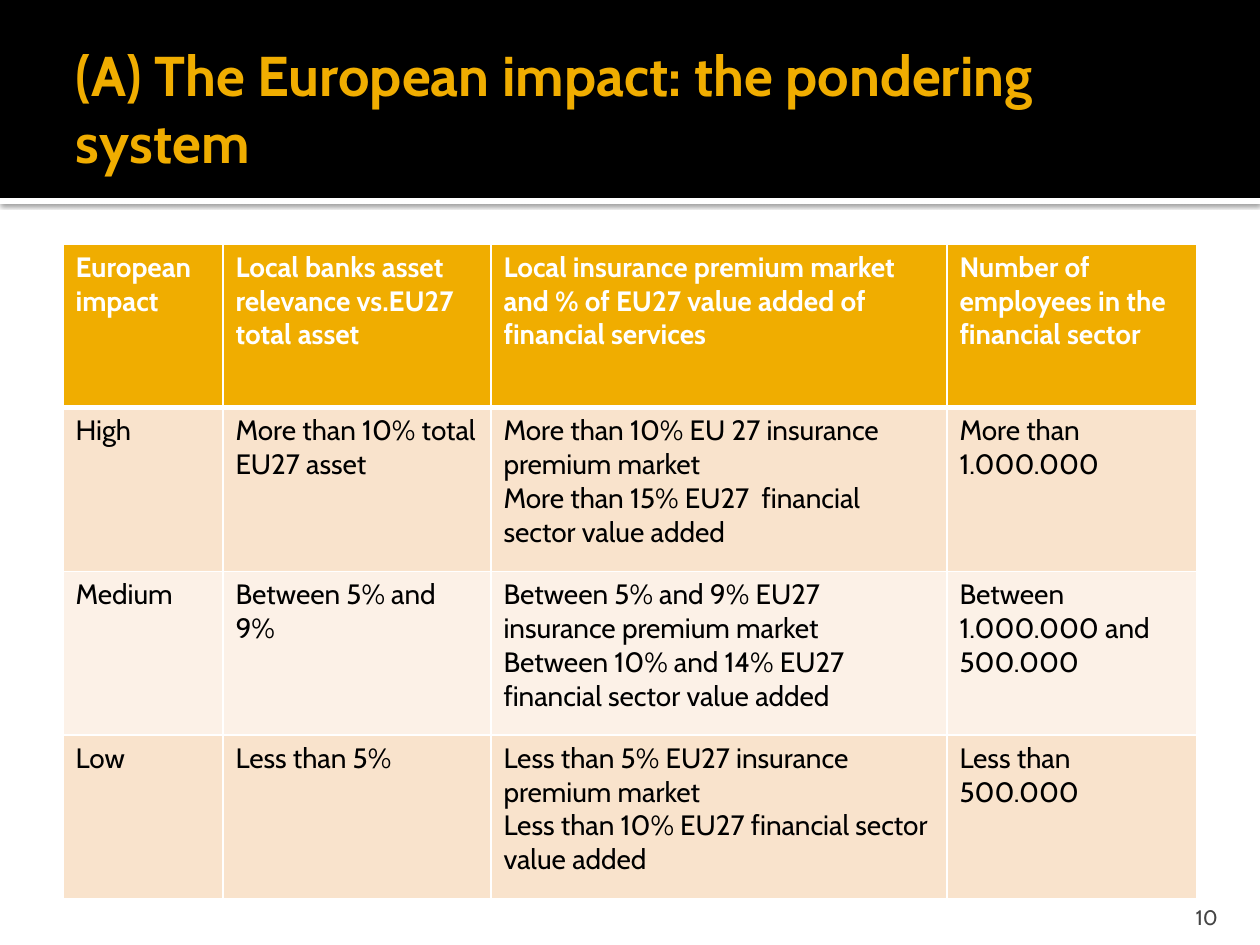
import lxml.etree
import pptx
import pptx.dml.color
import pptx.enum.shapes
import pptx.enum.text
import pptx.oxml.ns
import pptx.util

EMU_PER_PX = 914400 / 126
FONT = "Cabin"
GOLD, WHITE, BLACK, GREY = "F0AD00", "FFFFFF", "000000", "454545"
BANDS = ("F9E3CC", "FCF1E7")
ANCHOR = pptx.enum.text.MSO_ANCHOR
ALIGN = pptx.enum.text.PP_ALIGN

COLUMN_WIDTHS = (160, 268, 456, 250)
ROWS = (
    ("European impact", "Local banks asset relevance vs.EU27  total asset",
     "Local insurance premium market and % of EU27 value added of financial services",
     "Number of employees in the financial sector"),
    ("High", "More than 10% total EU27 asset",
     "More than 10% EU 27 insurance premium market\n"
     "More than 15% EU27  financial sector value added",
     "More than 1.000.000"),
    ("Medium", "Between 5% and 9%",
     "Between 5% and 9% EU27 insurance premium market\n"
     "Between 10% and 14% EU27 financial sector value added",
     "Between 1.000.000 and 500.000"),
    ("Low", "Less than 5%",
     "Less than 5% EU27 insurance premium market\n"
     "Less than 10% EU27 financial sector value added",
     "Less than 500.000"),
)


def px(n):
    return pptx.util.Emu(round(n * EMU_PER_PX))


def rgb(value):
    return pptx.dml.color.RGBColor.from_string(value)


def sub(parent, tag, **attrs):
    """Append a DrawingML child element."""
    return lxml.etree.SubElement(parent, pptx.oxml.ns.qn("a:" + tag), attrs)


def write(tf, text, size, color, bold=False, align=ALIGN.LEFT):
    """Fill a text frame, one paragraph for each line of text."""
    tf.word_wrap = True
    for i, line in enumerate(text.split("\n")):
        p = tf.add_paragraph() if i else tf.paragraphs[0]
        p.alignment = align
        r = p.add_run()
        r.text = line
        r.font.name = FONT
        r.font.size = pptx.util.Pt(size)
        r.font.bold = bold
        r.font.color.rgb = rgb(color)


def text_box(s, x, y, w, h, text, anchor, insets, **fmt):
    """Add a text box; insets are left, top, right, bottom."""
    tf = s.shapes.add_textbox(px(x), px(y), px(w), px(h)).text_frame
    tf.vertical_anchor = anchor
    tf.margin_left, tf.margin_top, tf.margin_right, tf.margin_bottom = map(px, insets)
    write(tf, text, **fmt)


def bar(s, x, y, w, h, color):
    sp = s.shapes.add_shape(pptx.enum.shapes.MSO_SHAPE.RECTANGLE,
                            px(x), px(y), px(w), px(h))
    sp.shadow.inherit = False
    sp.fill.solid()
    sp.fill.fore_color.rgb = rgb(color)
    sp.line.fill.background()
    return sp


def drop_shadow(sp):
    effects = sp._element.spPr.find(pptx.oxml.ns.qn("a:effectLst"))
    shadow = sub(effects, "outerShdw", blurRad="31750", dist="10160", dir="5400000",
                 algn="tl", rotWithShape="0")
    sub(sub(shadow, "srgbClr", val=BLACK), "alpha", val="60000")


def header(s, x, y, w, h):
    rule = 6
    drop_shadow(bar(s, x, y + h, w, rule, WHITE))
    bar(s, x, y, w, h, BLACK)
    text_box(s, x + 63, y + 21, w - 126, h - 25,
             "(A) The European impact: the pondering system",
             ANCHOR.MIDDLE, (13, 6, 6, 6), size=32, color=GOLD, bold=True)


def style_cell(cell, fill, widths):
    """Set borders (left, right, top, bottom, in points), then the fill."""
    tcPr = cell._tc.get_or_add_tcPr()
    for side, width in zip("LRTB", widths):
        ln = sub(tcPr, "ln" + side, w=str(pptx.util.Pt(width)))
        sub(sub(ln, "solidFill"), "srgbClr", val=WHITE)
    cell.fill.solid()
    cell.fill.fore_color.rgb = rgb(fill)


def impact_table(s, x, y, w, h):
    table = s.shapes.add_table(len(ROWS), len(COLUMN_WIDTHS),
                               px(x), px(y), px(w), px(h)).table
    for column, width in zip(table.columns, COLUMN_WIDTHS):
        column.width = px(width)
    for i, texts in enumerate(ROWS):
        table.rows[i].height = px(h / len(ROWS))
        head = i == 0
        fill = GOLD if head else BANDS[(i - 1) % 2]
        widths = (1, 1, 3 if i == 1 else 1, 3 if head else 1)
        for j, text in enumerate(texts):
            cell = table.cell(i, j)
            style_cell(cell, fill, widths)
            write(cell.text_frame, text, size=16,
                  color=WHITE if head else BLACK, bold=head)


def page_number(s, x, y, w, h):
    text_box(s, x, y, w, h, "10", ANCHOR.BOTTOM, (13, 6, 13, 0),
             size=12, color=GREY, align=ALIGN.RIGHT)


def main():
    prs = pptx.Presentation()
    prs.slide_width, prs.slide_height = px(1260), px(945)
    s = prs.slides.add_slide(prs.slide_layouts[6])
    header(s, 0, 0, 1260, 198)
    impact_table(s, 63, 244, sum(COLUMN_WIDTHS), 655)
    page_number(s, 1130, 892, 101, 38)
    prs.save("out.pptx")


if __name__ == "__main__":
    main()
